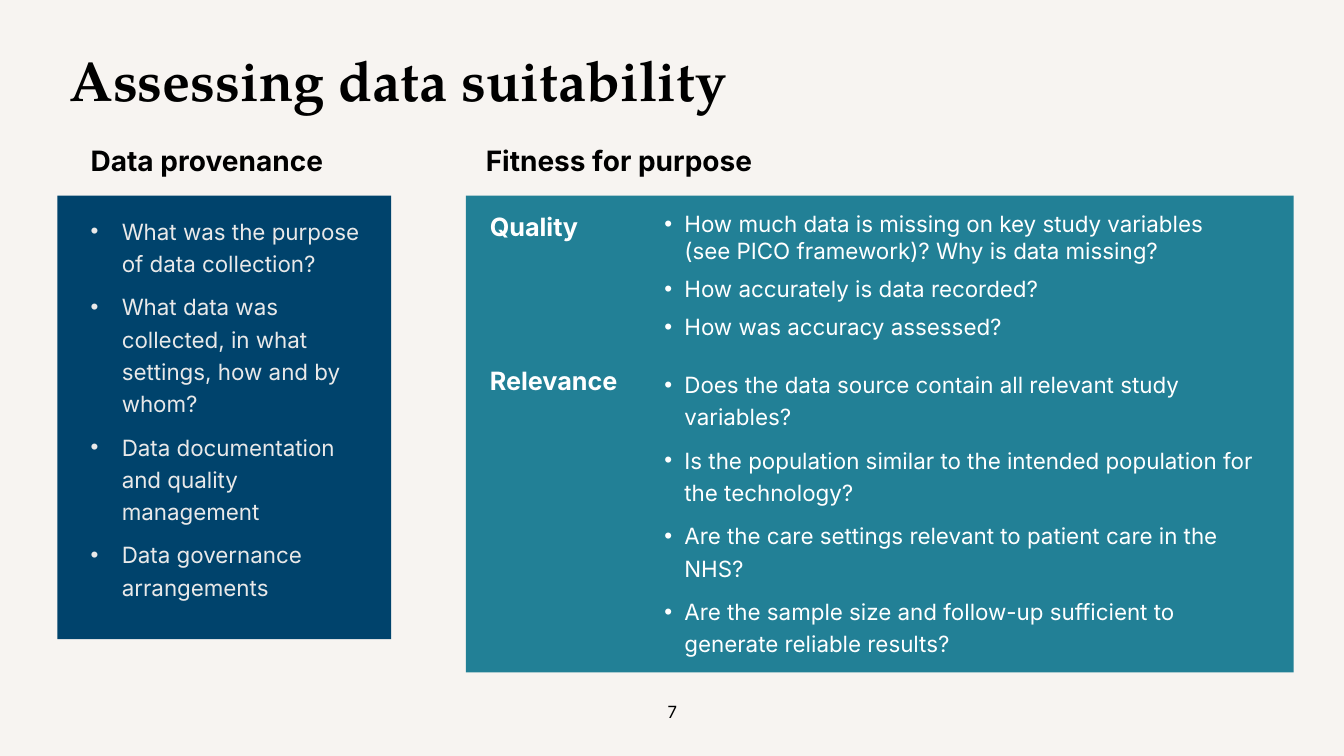
from pptx import Presentation
from pptx.dml.color import RGBColor
from pptx.enum.shapes import MSO_SHAPE
from pptx.enum.text import MSO_ANCHOR, MSO_AUTO_SIZE, PP_ALIGN
from pptx.oxml.ns import qn
from pptx.util import Inches, Pt
from lxml.etree import SubElement

BODY_FONT = "Inter"
TITLE_FONT = "TeX Gyre Pagella"
BLACK, WHITE, PALE = "000000", "FFFFFF", "E9E9E9"
CREAM, NAVY, TEAL = "F7F4F1", "00436C", "228096"

PROVENANCE = [
    "What was the purpose of data collection?",
    "What data was collected, in what settings, how and by whom?",
    "Data documentation and quality management",
    "Data governance arrangements",
]
QUALITY = [
    "How much data is missing on key study variables (see PICO framework)? Why is data missing?",
    "How accurately is data recorded?",
    "How was accuracy assessed?",
]
RELEVANCE = [
    "Does the data source contain all relevant study variables?",
    "Is the population similar to the intended population for the technology?",
    "Are the care settings relevant to patient care in the NHS?",
    "Are the sample size and follow-up sufficient to generate reliable results?",
]


def set_color(target, color):
    target.rgb = RGBColor.from_string(color)


def set_font(paragraph, size, color, bold=False, name=BODY_FONT):
    font = paragraph.font
    font.name, font.size, font.bold = name, Pt(size), bold
    set_color(font.color, color)


def add_bullet(paragraph, indent):
    properties = paragraph._p.get_or_add_pPr()
    properties.set("marL", str(Inches(indent)))
    properties.set("indent", str(-Inches(indent)))
    SubElement(properties, qn("a:buFont")).set("typeface", "Arial")
    SubElement(properties, qn("a:buChar")).set("char", "•")


def add_panel(slide, left, top, width, height, color):
    panel = slide.shapes.add_shape(
        MSO_SHAPE.RECTANGLE, Inches(left), Inches(top), Inches(width), Inches(height))
    panel.shadow.inherit = False
    panel.fill.solid()
    set_color(panel.fill.fore_color, color)
    panel.line.fill.background()


def add_text_frame(slide, left, top, width, height):
    frame = slide.shapes.add_textbox(
        Inches(left), Inches(top), Inches(width), Inches(height)).text_frame
    frame.word_wrap = True
    frame.auto_size = MSO_AUTO_SIZE.SHAPE_TO_FIT_TEXT
    return frame


def add_label(slide, text, left, top, width, height, size, color, bold=True):
    paragraph = add_text_frame(slide, left, top, width, height).paragraphs[0]
    paragraph.text = text
    set_font(paragraph, size, color, bold)
    return paragraph


def add_questions(slide, questions, left, top, width, height, color, indent, spacing):
    frame = add_text_frame(slide, left, top, width, height)
    frame.text = "\n".join(questions)
    for paragraph in frame.paragraphs:
        add_bullet(paragraph, indent)
        paragraph.line_spacing = spacing
        paragraph.space_after = Pt(8)
        set_font(paragraph, 16, color)


def add_title(slide, text):
    title = slide.shapes.title
    title.left, title.top = Inches(0.59), Inches(0.48)
    title.width, title.height = Inches(12.22), Inches(1.27)
    frame = title.text_frame
    frame.text = text
    frame.vertical_anchor = MSO_ANCHOR.TOP
    frame.auto_size = MSO_AUTO_SIZE.NONE
    paragraph = frame.paragraphs[0]
    paragraph.alignment = PP_ALIGN.LEFT
    paragraph.line_spacing = 0.9
    set_font(paragraph, 40, BLACK, True, TITLE_FONT)


def main():
    deck = Presentation()
    deck.slide_width, deck.slide_height = Inches(13.33), Inches(7.5)
    slide = deck.slides.add_slide(deck.slide_layouts[5])
    slide.background.fill.solid()
    set_color(slide.background.fill.fore_color, CREAM)

    add_title(slide, "Assessing data suitability")
    add_panel(slide, 4.62, 1.94, 8.21, 4.73, TEAL)
    add_panel(slide, 0.57, 1.94, 3.31, 4.4, NAVY)

    add_label(slide, "Data provenance", 0.8, 1.37, 3.57, 0.44, 20, BLACK)
    add_questions(slide, PROVENANCE, 0.8, 2.06, 2.97, 3.96, PALE, 0.31, 1.2)

    add_label(slide, "Fitness for purpose", 4.72, 1.37, 8.1, 0.44, 20, BLACK)
    add_label(slide, "Quality", 4.76, 2.05, 1.56, 0.4, 18, WHITE)
    add_questions(slide, QUALITY, 6.49, 2.04, 5.77, 1.4, WHITE, 0.2, 1.0)
    add_label(slide, "Relevance", 4.76, 3.58, 1.89, 0.4, 18, WHITE)
    add_questions(slide, RELEVANCE, 6.49, 3.58, 6.2, 3, WHITE, 0.2, 1.2)

    page_number = add_label(slide, "7", 5.17, 6.91, 3, 0.4, 12, BLACK, False)
    page_number.alignment = PP_ALIGN.CENTER

    deck.save("out.pptx")


if __name__ == "__main__":
    main()
